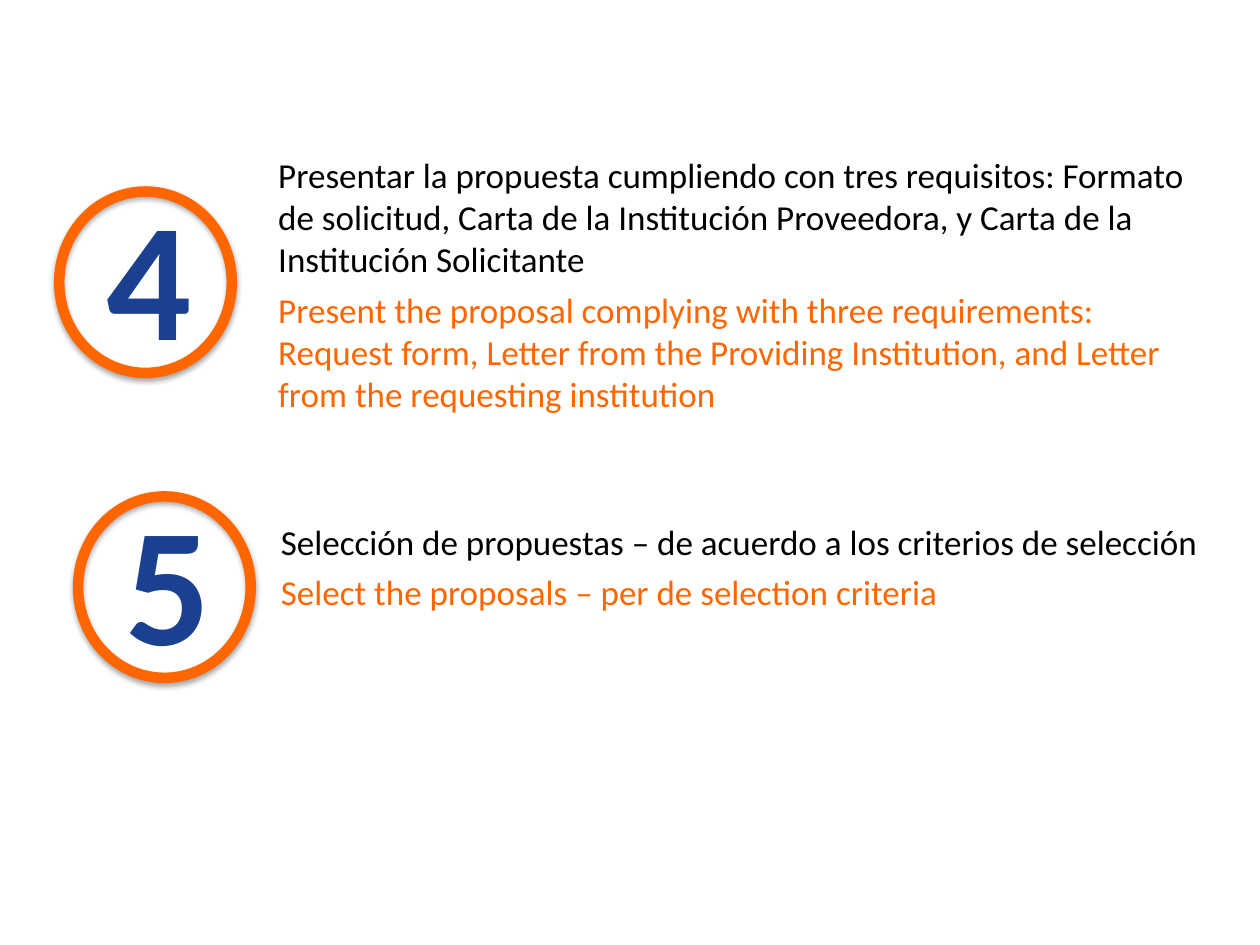
from dataclasses import dataclass

from lxml.etree import SubElement
from pptx import Presentation
from pptx.dml.color import RGBColor
from pptx.enum.shapes import MSO_SHAPE
from pptx.enum.text import MSO_ANCHOR
from pptx.oxml.ns import qn
from pptx.util import Inches, Pt

BLACK = RGBColor(0x00, 0x00, 0x00)
ORANGE = RGBColor(0xFF, 0x66, 0x00)
BLUE = RGBColor(0x1A, 0x41, 0x90)
FONT = "Calibri"


@dataclass(frozen=True)
class Step:
    number: str
    spanish: str
    english: str
    badge_left: float
    badge_top: float
    text_left: float
    text_top: float


STEPS = [
    Step(
        "4",
        "Presentar la propuesta cumpliendo con tres requisitos: Formato de solicitud, "
        "Carta de la Institución Proveedora, y Carta de la Institución Solicitante",
        "Present the proposal complying with three requirements: Request form, "
        "Letter from the Providing Institution, and Letter from the requesting institution",
        0.47, 1.52, 2.11, 1.17,
    ),
    Step(
        "5",
        "Selección de propuestas – de acuerdo a los criterios de selección",
        "Select the proposals – per de selection criteria",
        0.62, 3.94, 2.13, 4.08,
    ),
]


def add_soft_shadow(shape) -> None:
    shape.shadow.inherit = False
    effects = shape._element.spPr.find(qn("a:effectLst"))
    shadow = SubElement(effects, qn("a:outerShdw"), blurRad="40000", dist="23000",
                        dir="5400000", rotWithShape="0")
    color = SubElement(shadow, qn("a:srgbClr"), val="000000")
    SubElement(color, qn("a:alpha"), val="35000")


def format_text(paragraph, size: int, color: RGBColor, bold: bool = False) -> None:
    for run in paragraph.runs:
        run.font.name = FONT
        run.font.size = Pt(size)
        run.font.bold = bold
        run.font.color.rgb = color


def add_badge(slide, step: Step) -> None:
    """Group an orange ring with its large number."""
    badge = slide.shapes.add_group_shape()
    ring = badge.shapes.add_shape(
        MSO_SHAPE.OVAL, Inches(step.badge_left), Inches(step.badge_top),
        Inches(1.37), Inches(1.44))
    ring.fill.background()
    ring.line.color.rgb = ORANGE
    ring.line.width = Pt(6)
    add_soft_shadow(ring)

    number = badge.shapes.add_textbox(
        Inches(step.badge_left + 0.28), Inches(step.badge_top - 0.2),
        Inches(0.88), Inches(1.72))
    number.text_frame.word_wrap = True
    number.text_frame.text = step.number
    format_text(number.text_frame.paragraphs[0], 96, BLUE, bold=True)


def add_description(slide, step: Step) -> None:
    description = slide.shapes.add_textbox(
        Inches(step.text_left), Inches(step.text_top), Inches(7.58), Inches(0.75))
    frame = description.text_frame
    frame.word_wrap = True
    frame.vertical_anchor = MSO_ANCHOR.TOP
    frame.text = step.spanish
    format_text(frame.paragraphs[0], 20, BLACK)
    translation = frame.add_paragraph()
    translation.text = step.english
    translation.space_before = Pt(4.8)
    format_text(translation, 20, ORANGE)


def main() -> None:
    presentation = Presentation()
    presentation.slide_width = Inches(10)
    presentation.slide_height = Inches(7.5)
    slide = presentation.slides.add_slide(presentation.slide_layouts[6])
    for step in STEPS:
        add_description(slide, step)
        add_badge(slide, step)
    presentation.save("out.pptx")


if __name__ == "__main__":
    main()
